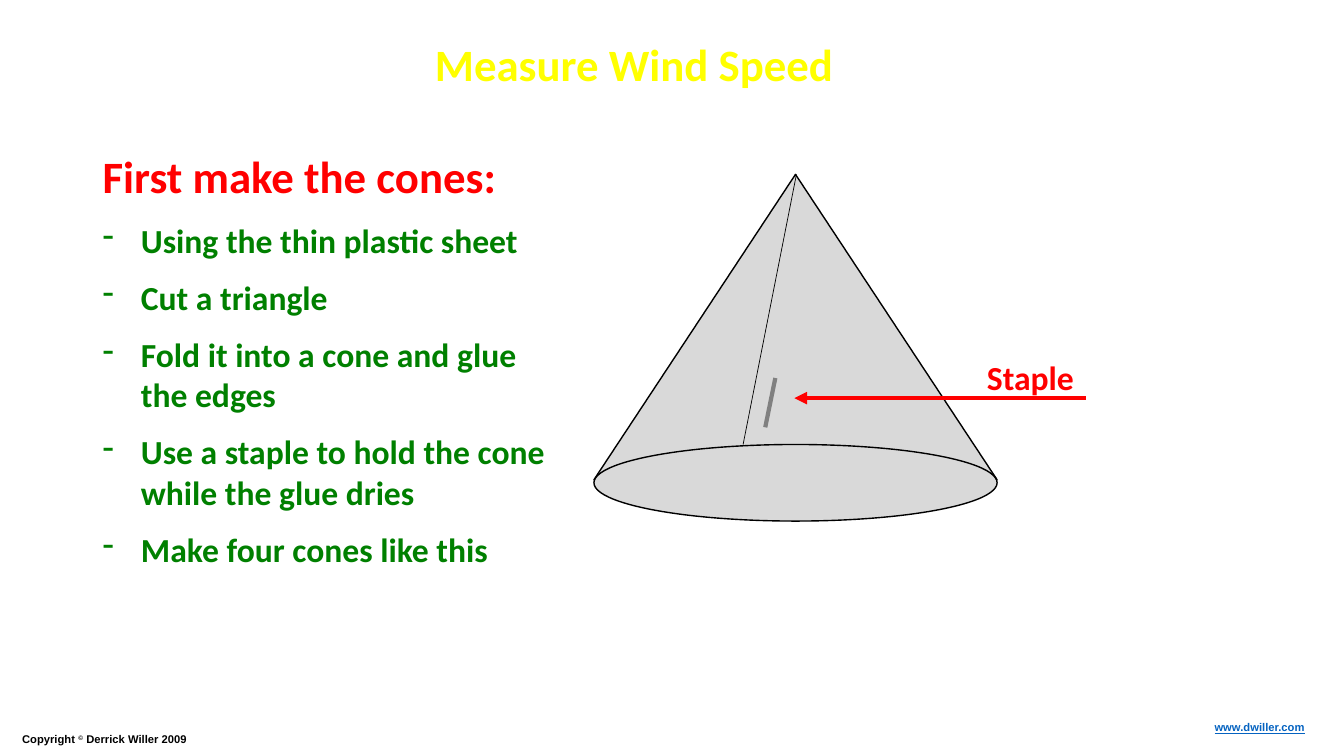
from lxml import etree
from pptx import Presentation
from pptx import util as u
from pptx.dml.color import RGBColor
from pptx.enum import shapes, text
from pptx.oxml import ns

COLOURS = {
    "title": "FFFF00",
    "accent": "FF0000",
    "step": "008000",
    "ink": "000000",
    "link": "0563C1",
    "cone": "D9D9D9",
    "staple": "808080",
}
STEPS = [
    "Using the thin plastic sheet",
    "Cut a triangle",
    "Fold it into a cone and glue the edges",
    "Use a staple to hold the cone while the glue dries",
    "Make four cones like this",
]


def colour(name):
    return RGBColor.from_string(COLOURS[name])


def write(paragraph, words, size=24, ink="ink", font="Calibri", underline=None, baseline=None):
    run = paragraph.add_run()
    run.text = words
    run.font.size = u.Pt(size)
    run.font.name = font
    run.font.bold = True
    run.font.underline = underline
    run.font.color.rgb = colour(ink)
    if baseline:
        run._r.get_or_add_rPr().set("baseline", str(baseline * 1000))


def add_dash(paragraph, indent):
    properties = paragraph._p.get_or_add_pPr()
    properties.set("marL", str(u.Inches(indent)))
    properties.set("indent", str(-u.Inches(indent)))
    etree.SubElement(properties, ns.qn("a:buFontTx"))
    etree.SubElement(properties, ns.qn("a:buChar")).set("char", "-")


class SlideBuilder:
    def __init__(self, presentation):
        self.width = presentation.slide_width
        self.height = presentation.slide_height
        self.slide = presentation.slides.add_slide(presentation.slide_layouts[5])

    def place(self, x, y):
        return round(self.width * x / 100), round(self.height * y / 100)

    def title(self, words, left, top, width, height):
        shape = self.slide.shapes.title
        shape.left, shape.top = self.place(left, top)
        shape.width, shape.height = self.place(width, height)
        shape.text_frame.word_wrap = False
        paragraph = shape.text_frame.paragraphs[0]
        paragraph.alignment = text.PP_ALIGN.CENTER
        write(paragraph, words, size=32, ink="title")

    def textbox(self, left, top, width, height, wrap=True):
        shape = self.slide.shapes.add_textbox(*self.place(left, top), *self.place(width, height))
        shape.text_frame.word_wrap = wrap
        shape.text_frame.auto_size = text.MSO_AUTO_SIZE.SHAPE_TO_FIT_TEXT
        return shape.text_frame

    def solid(self, kind, left, top, width, height):
        shape = self.slide.shapes.add_shape(kind, *self.place(left, top), *self.place(width, height))
        shape.shadow.inherit = False
        shape.fill.solid()
        shape.fill.fore_color.rgb = colour("cone")
        shape.line.color.rgb = colour("ink")
        shape.line.width = u.Pt(1)

    def line(self, start, end, ink, weight, arrow=False):
        connector = self.slide.shapes.add_connector(
            shapes.MSO_CONNECTOR.STRAIGHT, *self.place(*start), *self.place(*end))
        connector.line.color.rgb = colour(ink)
        connector.line.width = u.Pt(weight)
        if arrow:
            outline = connector.line._get_or_add_ln()
            etree.SubElement(outline, ns.qn("a:tailEnd")).set("type", "triangle")
        etree.SubElement(connector._element.spPr, ns.qn("a:effectLst"))


def main():
    presentation = Presentation()
    presentation.slide_width = u.Inches(13.33)
    presentation.slide_height = u.Inches(7.5)
    builder = SlideBuilder(presentation)

    builder.title("Measure Wind Speed", 31.06, 4.13, 32.26, 8.53)

    notice = builder.textbox(0.9, 96.27, 42.38, 3.2).paragraphs[0]
    for words, baseline in [("Copyright ", None), ("©", 30), (" Derrick Willer 2009", None)]:
        write(notice, words, size=8, font="Arial", baseline=baseline)

    website = builder.textbox(87.77, 94.67, 10.05, 3.2).paragraphs[0]
    website.alignment = text.PP_ALIGN.RIGHT
    write(website, "www.dwiller.com", size=8, ink="link", font="Arial", underline=True)

    instructions = builder.textbox(6.9, 19.07, 34.81, 57.47)
    heading = instructions.paragraphs[0]
    heading.space_before = u.Pt(12)
    write(heading, "First make the cones:", size=32, ink="accent")
    for step in STEPS:
        paragraph = instructions.add_paragraph()
        paragraph.space_before = u.Pt(12)
        add_dash(paragraph, 0.38)
        write(paragraph, step, ink="step")

    builder.solid(shapes.MSO_SHAPE.ISOSCELES_TRIANGLE, 44.19, 23.07, 30, 40.4)
    builder.solid(shapes.MSO_SHAPE.OVAL, 44.19, 58.8, 30, 10.13)
    builder.line((59.26, 23.07), (55.29, 58.8), "ink", 0.5)
    builder.line((57.69, 50), (56.94, 56.53), "staple", 3)
    builder.line((80.8, 52.67), (59.11, 52.67), "accent", 3, arrow=True)

    label = builder.textbox(72.69, 46.53, 8.1, 6.67, wrap=False)
    write(label.paragraphs[0], "Staple", ink="accent")

    presentation.save("out.pptx")


if __name__ == "__main__":
    main()
